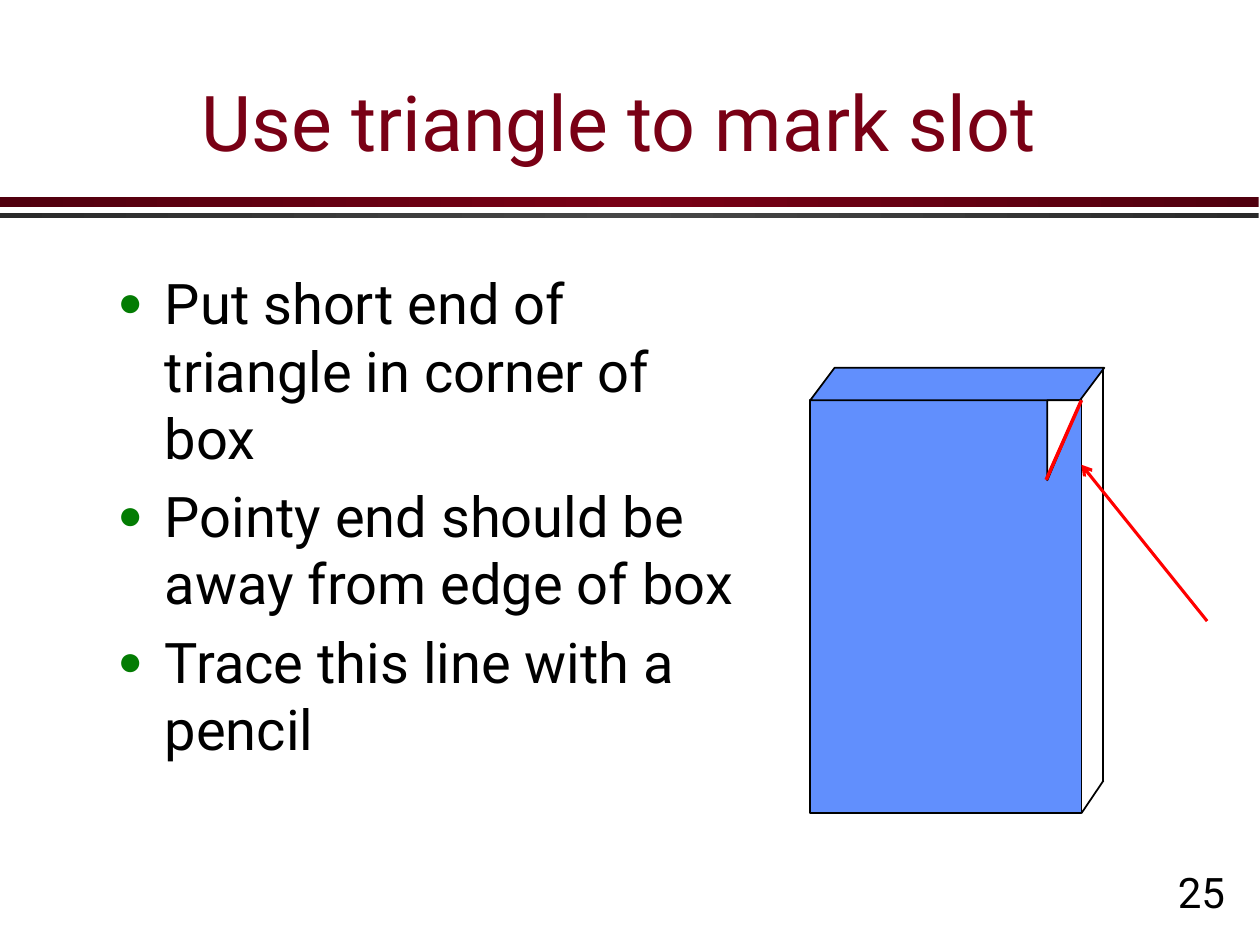
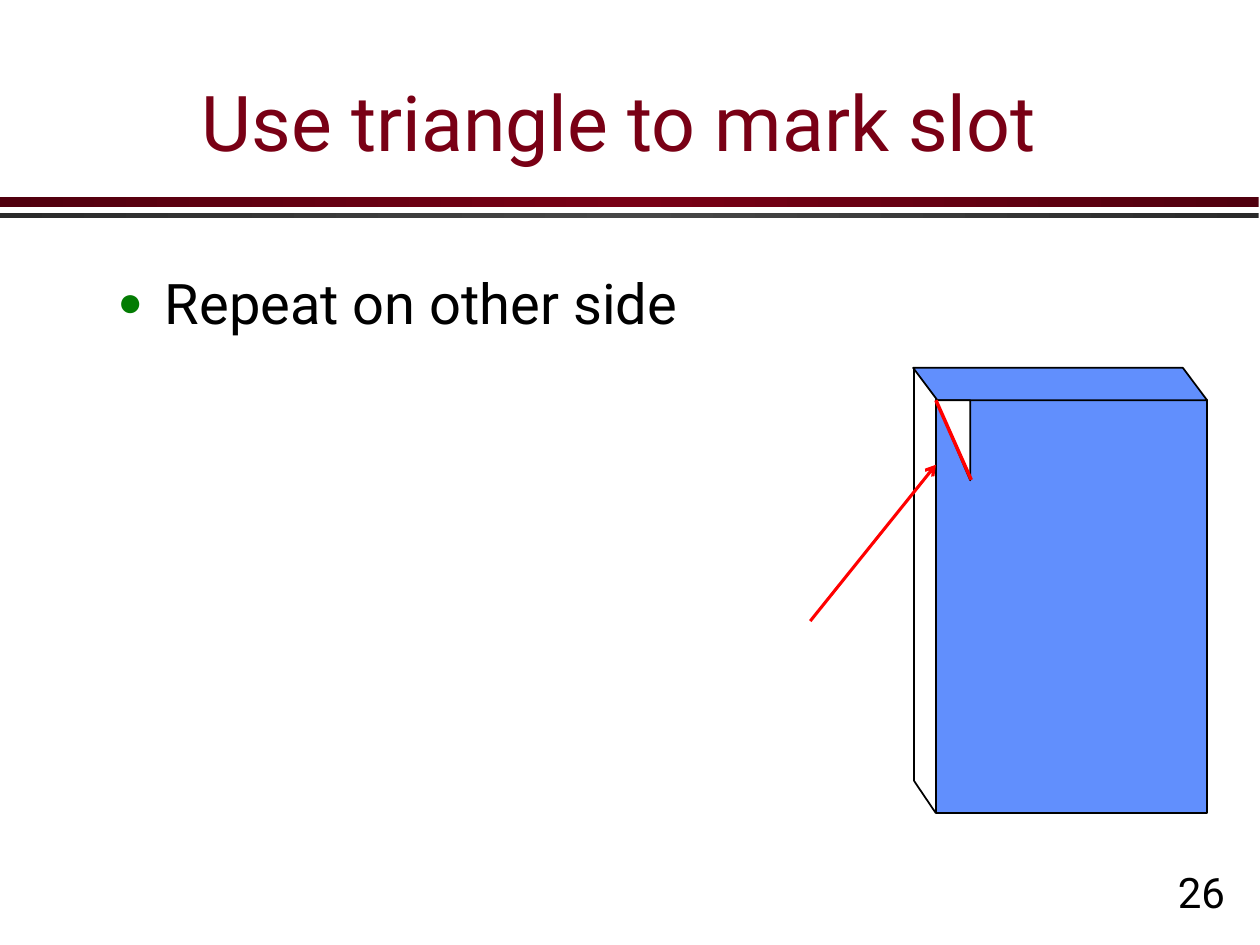
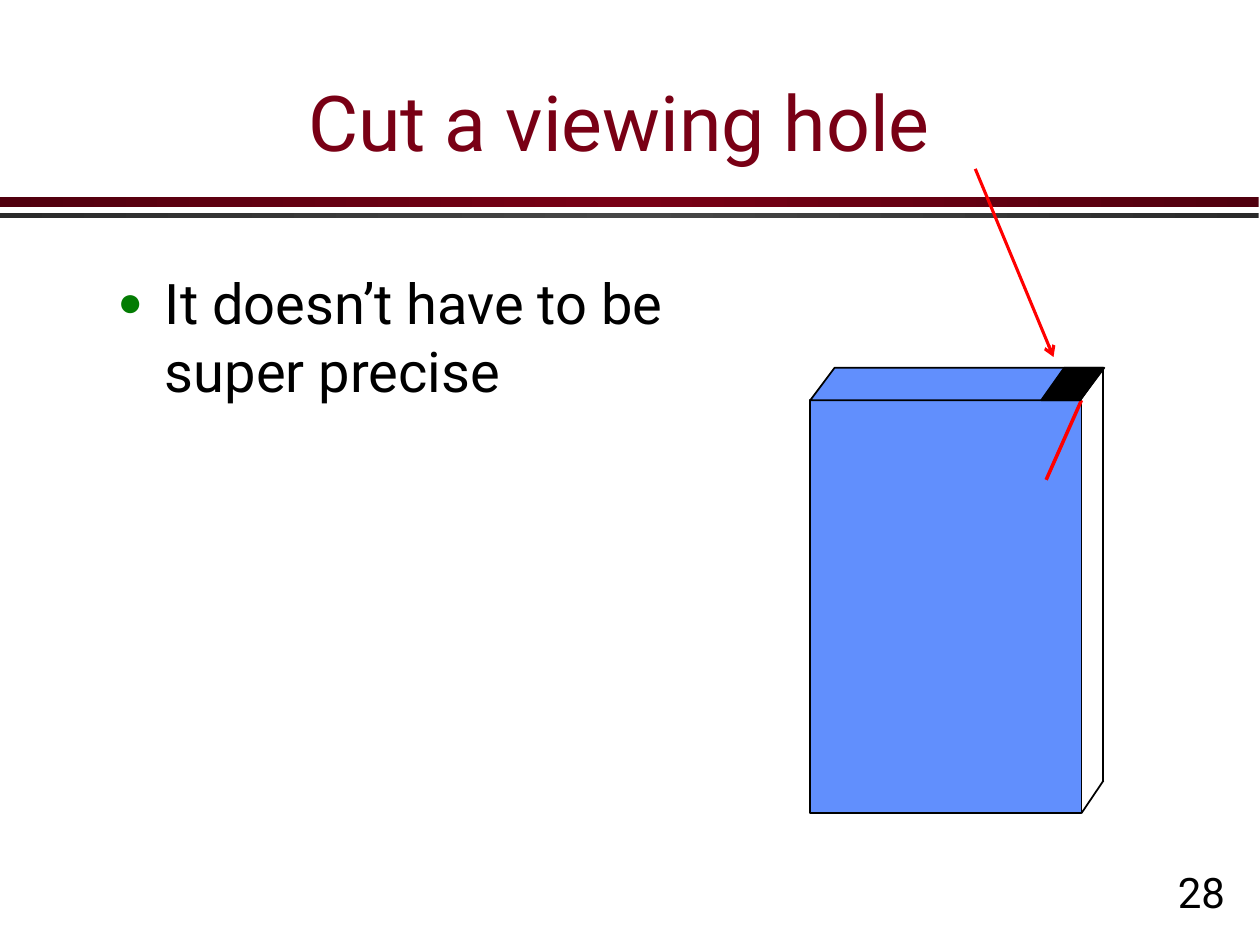
from dataclasses import dataclass
from typing import Any

from lxml.etree import SubElement
from pptx import Presentation
from pptx.dml.color import RGBColor
from pptx.enum.shapes import MSO_CONNECTOR, MSO_SHAPE
from pptx.enum.text import MSO_ANCHOR, MSO_AUTO_SIZE, PP_ALIGN
from pptx.oxml.ns import qn
from pptx.util import Pt

FONT = "Roboto"
HUES = {
    "title": "790015",
    "wine": "51000E",
    "ash": "474747",
    "coal": "2A2A2A",
    "dot": "037C03",
    "box": "618FFD",
    "ink": "000000",
    "paper": "FFFFFF",
    "mark": "FF0000",
}
FRONT, FULL, RIM, SIDE, TALL = 155, 168, 18.5, 236, 254.5


def hue(name):
    """Return the named colour."""
    return RGBColor.from_string(HUES[name])


def place(shape, left, top, width, height):
    """Move and size a shape, in points."""
    shape.left, shape.top = Pt(left), Pt(top)
    shape.width, shape.height = Pt(width), Pt(height)


def style(para, size, name):
    """Format every run of a paragraph."""
    for run in para.runs:
        run.font.name = FONT
        run.font.size = Pt(size)
        run.font.color.rgb = hue(name)


@dataclass
class Scene:
    """Drawing area in points that can be mirrored left to right."""

    pane: Any
    left: float = 463
    top: float = 210.2
    width: float = 226.8
    flip: bool = False

    def spot(self, x, y):
        """Turn a local point into a slide point."""
        x = self.width - x if self.flip else x
        return Pt(self.left + x), Pt(self.top + y)

    def solid(self, kind, x, y, width, height, fill, skew=None, turn=0):
        """Draw an outlined preset shape."""
        left, top = self.spot(x + width if self.flip else x, y)
        shape = self.pane.add_shape(kind, left, top, Pt(width), Pt(height))
        shape.shadow.inherit = False
        shape.fill.solid()
        shape.fill.fore_color.rgb = hue(fill)
        shape.line.color.rgb = hue("ink")
        shape.line.width = Pt(1)
        if skew is not None:
            shape.adjustments[0] = skew
        shape.rotation = -turn % 360 if self.flip else turn
        if self.flip:
            shape.element.spPr.find(qn("a:xfrm")).set("flipH", "1")

    def line(self, start, end, name="ink", weight=1, arrow=False):
        """Draw a straight line between two local points."""
        line = self.pane.add_connector(
            MSO_CONNECTOR.STRAIGHT, *self.spot(*start), *self.spot(*end))
        line.line.color.rgb = hue(name)
        line.line.width = Pt(weight)
        if arrow:
            SubElement(line.line._get_or_add_ln(), qn("a:tailEnd"), type="arrow")
        SubElement(line.element.spPr, qn("a:effectLst"))


def draw_box(scene):
    """Draw the box: front, top and open side."""
    scene.solid(MSO_SHAPE.RECTANGLE, 0, RIM, FRONT, TALL - RIM, "box")
    scene.solid(MSO_SHAPE.PARALLELOGRAM, 0, 0, FULL, RIM, "box", skew=0.75)
    scene.line((FULL - 0.5, 0), (FULL - 0.5, SIDE))
    scene.line((FULL - 0.5, SIDE), (FRONT, TALL))


def draw_mark(scene):
    """Draw the slanted pencil mark."""
    scene.line((FRONT, RIM), (134.8, 64), "mark", 2)


def draw_slot(scene):
    """Draw the box with the triangle set in its corner."""
    draw_box(scene)
    long, short = 45.8, 19.6
    scene.solid(MSO_SHAPE.RIGHT_TRIANGLE, FRONT - (short + long) / 2,
                RIM + (long - short) / 2, long, short, "paper", turn=90)
    draw_mark(scene)
    scene.line((scene.width, 144.7), (FRONT, 55.4), "mark", 1.75, True)


def draw_hole(scene):
    """Draw the box with the hole in its top."""
    draw_box(scene)
    draw_mark(scene)
    scene.solid(MSO_SHAPE.PARALLELOGRAM, 132, 0, 35.5, RIM, "ink", skew=0.71)
    scene.line((94.3, -113.7), (139, -6.2), "mark", 1.75, True)


def add_bands(slide, layout):
    """Put the two title bands on the layout."""
    for top, height, edge, core in ((112.5, 5.8, "wine", "title"),
                                    (121.8, 2.9, "coal", "ash")):
        band = slide.shapes.add_shape(
            MSO_SHAPE.RECTANGLE, 0, Pt(top), Pt(719.3), Pt(height))
        band.shadow.inherit = False
        band.line.fill.background()
        band.fill.gradient()
        band.fill.gradient_angle = 0
        stops = band.element.spPr.find(qn("a:gradFill")).find(qn("a:gsLst"))
        stops.clear()
        for place_at, name in ((0, edge), (50, core), (100, edge)):
            stop = SubElement(stops, qn("a:gs"), pos=str(place_at * 1000))
            SubElement(stop, qn("a:srgbClr"), val=HUES[name])
        layout.shapes.element.append(band.element)


def add_title(slide, text):
    """Fill the title."""
    title = slide.shapes.title
    place(title, 48, 24, 612, 90)
    frame = title.text_frame
    frame.text = text
    frame.auto_size = MSO_AUTO_SIZE.NONE
    frame.vertical_anchor = MSO_ANCHOR.MIDDLE
    frame.paragraphs[0].alignment = PP_ALIGN.CENTER
    style(frame.paragraphs[0], 44, "title")


def add_list(slide, items):
    """Fill the body with bulleted items."""
    body = slide.placeholders[1]
    place(body, 60, 150, 375, 324)
    frame = body.text_frame
    frame.text = "\n".join(items)
    frame.auto_size = MSO_AUTO_SIZE.NONE
    for rank, para in enumerate(frame.paragraphs):
        props = para._p.get_or_add_pPr()
        props.set("marL", str(Pt(27)))
        props.set("indent", str(-Pt(27)))
        tint = SubElement(props, qn("a:buClr"))
        SubElement(tint, qn("a:srgbClr"), val=HUES["dot"])
        SubElement(props, qn("a:buSzPct"), val="75000")
        SubElement(props, qn("a:buChar"), char="●")
        para.space_before = Pt(6.4 if rank else 0)
        style(para, 32, "ink")


def add_page(slide, page):
    """Write the page number."""
    label = slide.shapes.add_textbox(Pt(666), Pt(491.8), Pt(44), Pt(36))
    frame = label.text_frame
    frame.text = str(page)
    frame.word_wrap = False
    frame.auto_size = MSO_AUTO_SIZE.SHAPE_TO_FIT_TEXT
    style(frame.paragraphs[0], 24, "ink")


def add_step(deck, layout, page, title, items):
    """Add a slide with its title, list and page number."""
    slide = deck.slides.add_slide(layout)
    add_title(slide, title)
    add_list(slide, items)
    add_page(slide, page)
    return slide


def main():
    """Build and save the deck."""
    deck = Presentation()
    deck.slide_width, deck.slide_height = Pt(720), Pt(540)
    layout = deck.slide_layouts[1]
    slot = "Use triangle to mark slot"

    slide = add_step(deck, layout, 25, slot, [
        "Put short end of triangle in corner of box",
        "Pointy end should be away from edge of box",
        "Trace this line with a pencil",
    ])
    add_bands(slide, layout)
    draw_slot(Scene(slide.shapes))

    slide = add_step(deck, layout, 26, slot, ["Repeat on other side"])
    draw_slot(Scene(slide.shapes.add_group_shape().shapes, flip=True))

    slide = add_step(deck, layout, 28, "Cut a viewing hole",
                     ["It doesn’t have to be super precise"])
    draw_hole(Scene(slide.shapes))

    deck.save("out.pptx")


if __name__ == "__main__":
    main()
